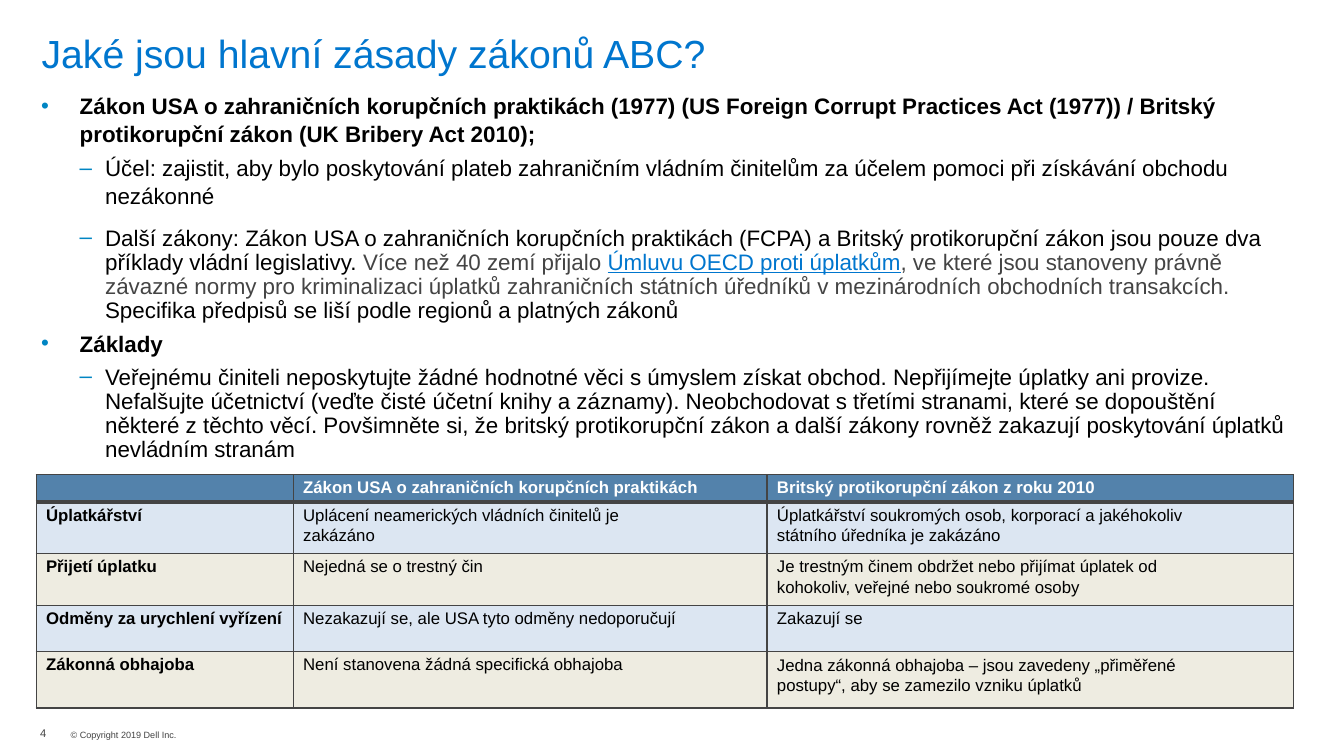
from dataclasses import dataclass

from lxml import etree
from pptx import Presentation
from pptx.dml.color import RGBColor
from pptx.oxml.ns import qn
from pptx.util import Cm, Pt


@dataclass(frozen=True)
class Theme:
    font: str = "Arial"
    blue: str = "0076CE"
    bullet: str = "0085C3"
    black: str = "000000"
    white: str = "FFFFFF"
    grey: str = "444444"
    header: str = "5382AB"
    bands: tuple = ("DCE6F2", "EEECE1")
    title_size: float = 28
    body_size: float = 16
    table_size: float = 12
    number_size: float = 8
    copyright_size: float = 6.5


# Bullet levels: (character, left margin, hanging indent) in cm
LEVELS = (("•", 0.99, 0.97), ("–", 1.63, 0.64))

# Each paragraph: level, space before, line spacing, runs of (text, colour name)
BODY = [
    (0, 0, 1.05, [("Zákon USA o zahraničních korupčních praktikách (1977) (US Foreign Corrupt "
                   "Practices Act (1977)) / Britský protikorupční zákon (UK Bribery Act 2010);", "black")]),
    (1, 4.1, 1.05, [("Účel: zajistit, aby bylo poskytování plateb zahraničním vládním činitelům "
                     "za účelem pomoci při získávání obchodu nezákonné", "black")]),
    (1, 12.2, Pt(17.3), [
        ("Další zákony: Zákon USA o zahraničních korupčních praktikách (FCPA) a Britský "
         "protikorupční zákon jsou pouze dva příklady vládní legislativy. ", "black"),
        ("Více než 40 zemí přijalo ", "grey"),
        ("Úmluvu OECD proti úplatkům", "blue"),
        (", ve které jsou stanoveny právně závazné normy pro kriminalizaci úplatků zahraničních "
         "státních úředníků v mezinárodních obchodních transakcích. ", "grey"),
        ("Specifika předpisů se liší podle regionů a platných zákonů", "black")]),
    (0, 3.8, 1.05, [("Základy", "black")]),
    (1, 6.2, Pt(17.3), [
        ("Veřejnému činiteli neposkytujte žádné hodnotné věci s úmyslem získat obchod. "
         "Nepřijímejte úplatky ani provize. Nefalšujte účetnictví (veďte čisté účetní knihy a "
         "záznamy). Neobchodovat s třetími stranami, které se dopouštění některé z těchto věcí. "
         "Povšimněte si, že britský protikorupční zákon a další zákony rovněž zakazují "
         "poskytování úplatků nevládním stranám", "black")]),
]

COLUMNS = (6.48, 11.94, 13.26)
ROW_HEIGHTS = (0.69, 1.3, 1.3, 1.17, 1.42)
ROWS = [
    ("", "Zákon USA o zahraničních korupčních praktikách", "Britský protikorupční zákon z roku 2010"),
    ("Úplatkářství", "Uplácení neamerických vládních činitelů je zakázáno",
     "Úplatkářství soukromých osob, korporací a jakéhokoliv státního úředníka je zakázáno"),
    ("Přijetí úplatku", "Nejedná se o trestný čin",
     "Je trestným činem obdržet nebo přijímat úplatek od\nkohokoliv, veřejné nebo soukromé osoby"),
    ("Odměny za urychlení vyřízení", "Nezakazují se, ale USA tyto odměny nedoporučují", "Zakazují se"),
    ("Zákonná obhajoba", "Není stanovena žádná specifická obhajoba",
     "Jedna zákonná obhajoba – jsou zavedeny „přiměřené postupy“, aby se zamezilo vzniku úplatků"),
]
LOOSE_CELLS = {(1, 1), (1, 2), (4, 2)}  # wrapped text with wider lines


class Deck:
    def __init__(self, prs, theme):
        self.theme = theme
        self.s = prs.slides.add_slide(prs.slide_layouts[6])

    def style(self, r, size, color, bold=False):
        r.font.name = self.theme.font
        r.font.size = Pt(size)
        r.font.bold = bold
        r.font.color.rgb = RGBColor.from_string(color)

    def box(self, x, y, w, h, top=0):
        tf = self.s.shapes.add_textbox(Cm(x), Cm(y), Cm(w), Cm(h)).text_frame
        tf.word_wrap = True
        tf.margin_left = tf.margin_right = tf.margin_bottom = 0
        tf.margin_top = Cm(top)
        return tf

    def label(self, text, x, y, w, h, size, color, left=0.03, top=0.03):
        tf = self.box(x, y, w, h, top)
        tf.margin_left = Cm(left)
        tf.text = text
        self.style(tf.paragraphs[0].runs[0], size, color)

    def bullet(self, p, level):
        char, margin, hang = LEVELS[level]
        p.level = level
        pPr = p._p.get_or_add_pPr()
        pPr.set("marL", str(Cm(margin)))
        pPr.set("indent", str(-Cm(hang)))
        color = etree.SubElement(pPr, qn("a:buClr"))
        etree.SubElement(color, qn("a:srgbClr"), val=self.theme.bullet)
        etree.SubElement(pPr, qn("a:buFont"), typeface=self.theme.font)
        etree.SubElement(pPr, qn("a:buChar"), char=char)

    def bullets(self, items, x, y, w, h):
        tf = self.box(x, y, w, h, 0.18)
        for i, (level, before, spacing, runs) in enumerate(items):
            p = tf.add_paragraph() if i else tf.paragraphs[0]
            self.bullet(p, level)
            p.space_before = Pt(before)
            p.line_spacing = spacing
            for text, color in runs:
                r = p.add_run()
                r.text = text
                self.style(r, self.theme.body_size, getattr(self.theme, color), level == 0)
                r.font.underline = color == "blue"

    def borders(self, cell, widths):
        tcPr = cell._tc.get_or_add_tcPr()
        for i, (side, width) in enumerate(widths.items()):
            ln = etree.Element(qn(f"a:ln{side}"), w=str(Pt(width)))
            fill = etree.SubElement(ln, qn("a:solidFill"))
            etree.SubElement(fill, qn("a:srgbClr"), val=self.theme.grey)
            tcPr.insert(i, ln)

    def cell(self, cell, text, row, col):
        t = self.theme
        loose = (row, col) in LOOSE_CELLS
        cell.fill.solid()
        cell.fill.fore_color.rgb = RGBColor.from_string(t.bands[(row - 1) % 2] if row else t.header)
        cell.margin_left = Cm(0.25)
        cell.margin_right = Cm(2.15 if row and col else 0)
        cell.margin_top = Cm(0.08 if loose else 0.1)
        cell.margin_bottom = 0
        cell.text_frame.text = text
        for i, p in enumerate(cell.text_frame.paragraphs):
            if i:
                p.space_before = Pt(1)
            if loose:
                p.line_spacing = 1.07
            for r in p.runs:
                self.style(r, t.table_size, t.black if row else t.white, row == 0 or col == 0)
            if not p.runs:
                end = etree.SubElement(p._p, qn("a:endParaRPr"))
                end.set("sz", str(t.table_size * 100))
        self.borders(cell, {"L": 1, "R": 1, "T": 3 if row == 1 else 1, "B": 1 if row else 3})

    def table(self, rows, x, y, widths, heights):
        table = self.s.shapes.add_table(len(rows), len(widths), Cm(x), Cm(y),
                                        Cm(sum(widths)), Cm(sum(heights))).table
        for column, width in zip(table.columns, widths):
            column.width = Cm(width)
        for row, height in zip(table.rows, heights):
            row.height = Cm(height)
        for i, texts in enumerate(rows):
            for j, text in enumerate(texts):
                self.cell(table.cell(i, j), text, i, j)


def main():
    prs = Presentation()
    prs.slide_width, prs.slide_height = Cm(33.87), Cm(19.05)
    theme = Theme()
    deck = Deck(prs, theme)

    # Title and bullets
    deck.label("Jaké jsou hlavní zásady zákonů ABC?", 1.02, 0.66, 25, 1.24,
               theme.title_size, theme.blue, top=0.07)
    deck.bullets(BODY, 1.02, 2.11, 31.57, 9.37)

    # Comparison of the two acts
    deck.table(ROWS, 0.91, 11.96, COLUMNS, ROW_HEIGHTS)

    # Footer
    deck.label("4", 0.91, 18.31, 0.56, 0.36, theme.number_size, theme.grey, left=0.1, top=0)
    deck.label("© Copyright 2019 Dell Inc.", 1.75, 18.34, 2.84, 0.3,
               theme.copyright_size, theme.grey)

    prs.save("out.pptx")


if __name__ == "__main__":
    main()
